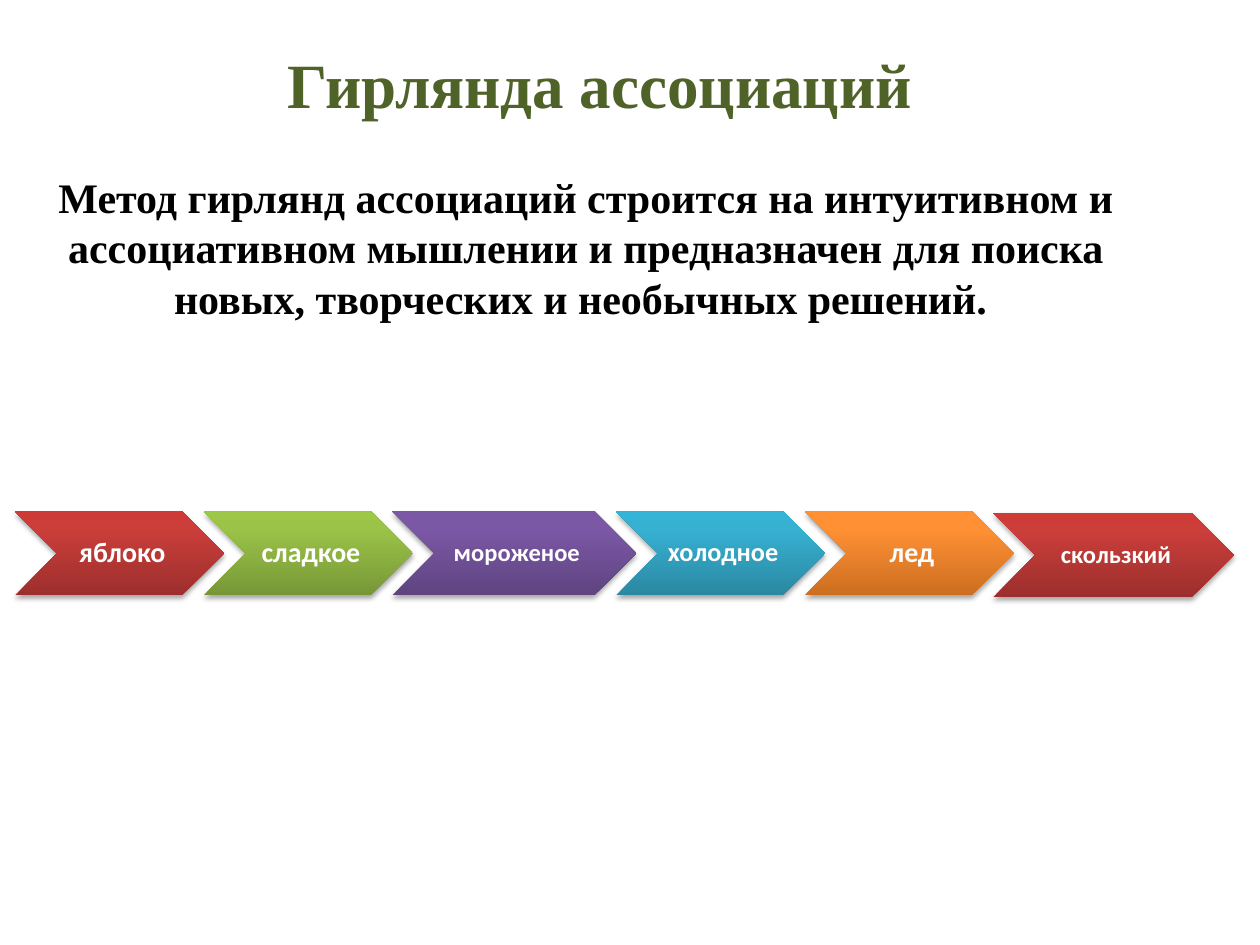
from dataclasses import dataclass

from lxml.etree import SubElement
from pptx import Presentation
from pptx.dml.color import RGBColor
from pptx.enum.shapes import MSO_SHAPE
from pptx.enum.text import MSO_ANCHOR, MSO_AUTO_SIZE, PP_ALIGN
from pptx.oxml.ns import qn
from pptx.util import Pt


@dataclass(frozen=True)
class Theme:
    heading_font: str = "Times New Roman"
    label_font: str = "Calibri"
    title_size: int = 36
    body_size: int = 24
    title_color: str = "4F6228"
    body_color: str = "000000"
    label_color: str = "FFFFFF"
    shadow_color: str = "000000"
    # Gradient colours from the bottom edge to the top edge
    red: tuple = ("9C2F2D", "CB3E3A", "CE3B37")
    green: tuple = ("779737", "9BC348", "9DC746")
    purple: tuple = ("5F4480", "7B58A6", "7C57A8")
    blue: tuple = ("2A88A2", "37B1D2", "34B4D6")
    orange: tuple = ("CC6E20", "FF9034", "FF9136")


THEME = Theme()
GRADIENT_POSITIONS = (0, 80, 100)
CHEVRON_OVERLAP = 11.7

# Label, text size, chevron width, drop below the row, gradient
ASSOCIATIONS = (
    ("яблоко", 16, 119.5, 0, THEME.red),
    ("сладкое", 16, 119.5, 0, THEME.green),
    ("мороженое", 14, 139.5, 0, THEME.purple),
    ("холодное", 15, 119.5, 0, THEME.blue),
    ("лед", 16, 119.5, 0, THEME.orange),
    ("скользкий", 14, 137.5, 1, THEME.red),
)


def write_centered(text_frame, text, font_name, size, color):
    text_frame.word_wrap = True
    paragraph = text_frame.paragraphs[0]
    paragraph.text = text
    paragraph.alignment = PP_ALIGN.CENTER
    font = paragraph.font
    font.name, font.size, font.bold = font_name, Pt(size), True
    font.color.rgb = RGBColor.from_string(color)
    return paragraph


def add_title(slide, left, top, width, height):
    box = slide.shapes.add_textbox(Pt(left), Pt(top), Pt(width), Pt(height))
    box.text_frame.vertical_anchor = MSO_ANCHOR.BOTTOM
    paragraph = write_centered(box.text_frame, "Гирлянда ассоциаций",
                               THEME.heading_font, THEME.title_size, THEME.title_color)
    paragraph.line_spacing = 0.9


def add_description(slide, left, top, width, height):
    box = slide.shapes.add_textbox(Pt(left), Pt(top), Pt(width), Pt(height))
    box.text_frame.auto_size = MSO_AUTO_SIZE.SHAPE_TO_FIT_TEXT
    write_centered(
        box.text_frame,
        "Метод гирлянд ассоциаций строится на интуитивном и ассоциативном мышлении "
        "и предназначен для поиска новых, творческих и необычных решений. ",
        THEME.heading_font, THEME.body_size, THEME.body_color)


def fill_with_gradient(shape, colors):
    shape.fill.gradient()
    shape.fill.gradient_angle = 90
    stop_list = shape._element.spPr.find(qn("a:gradFill")).find(qn("a:gsLst"))
    for stop in list(stop_list):
        stop_list.remove(stop)
    for position, color in zip(GRADIENT_POSITIONS, colors):
        stop = SubElement(stop_list, qn("a:gs"), pos=str(position * 1000))
        SubElement(stop, qn("a:srgbClr"), val=color)


def add_soft_shadow(shape):
    shape.shadow.inherit = False
    effects = shape._element.spPr.find(qn("a:effectLst"))
    shadow = SubElement(effects, qn("a:outerShdw"), blurRad=str(Pt(3.1)),
                        dist=str(Pt(1.8)), dir="5400000", rotWithShape="0")
    color = SubElement(shadow, qn("a:srgbClr"), val=THEME.shadow_color)
    SubElement(color, qn("a:alpha"), val="35000")


def add_chevron(slide, left, top, width, height, label, size, colors):
    chevron = slide.shapes.add_shape(
        MSO_SHAPE.CHEVRON, Pt(left), Pt(top), Pt(width), Pt(height))
    fill_with_gradient(chevron, colors)
    chevron.line.fill.background()
    add_soft_shadow(chevron)
    frame = chevron.text_frame
    frame.vertical_anchor = MSO_ANCHOR.MIDDLE
    frame.margin_left = Pt(size * 0.3)
    frame.margin_top = frame.margin_right = frame.margin_bottom = Pt(size * 0.1)
    paragraph = write_centered(frame, label, THEME.label_font, size, THEME.label_color)
    paragraph.line_spacing = 0.9


def add_garland(slide, left, top, height):
    """Chain the chevrons from left to right, each overlapping the one before."""
    for label, size, width, drop, colors in ASSOCIATIONS:
        add_chevron(slide, left, top + drop, width, height, label, size, colors)
        left += width - CHEVRON_OVERLAP


def main():
    presentation = Presentation()
    presentation.slide_width, presentation.slide_height = Pt(720), Pt(540)
    slide = presentation.slides.add_slide(presentation.slide_layouts[6])
    add_garland(slide, left=8.6, top=292.2, height=48)
    add_title(slide, left=31, top=31.7, width=623.5, height=41.8)
    add_description(slide, left=14.4, top=94.3, width=640.8, height=94.3)
    presentation.save("out.pptx")


if __name__ == "__main__":
    main()
